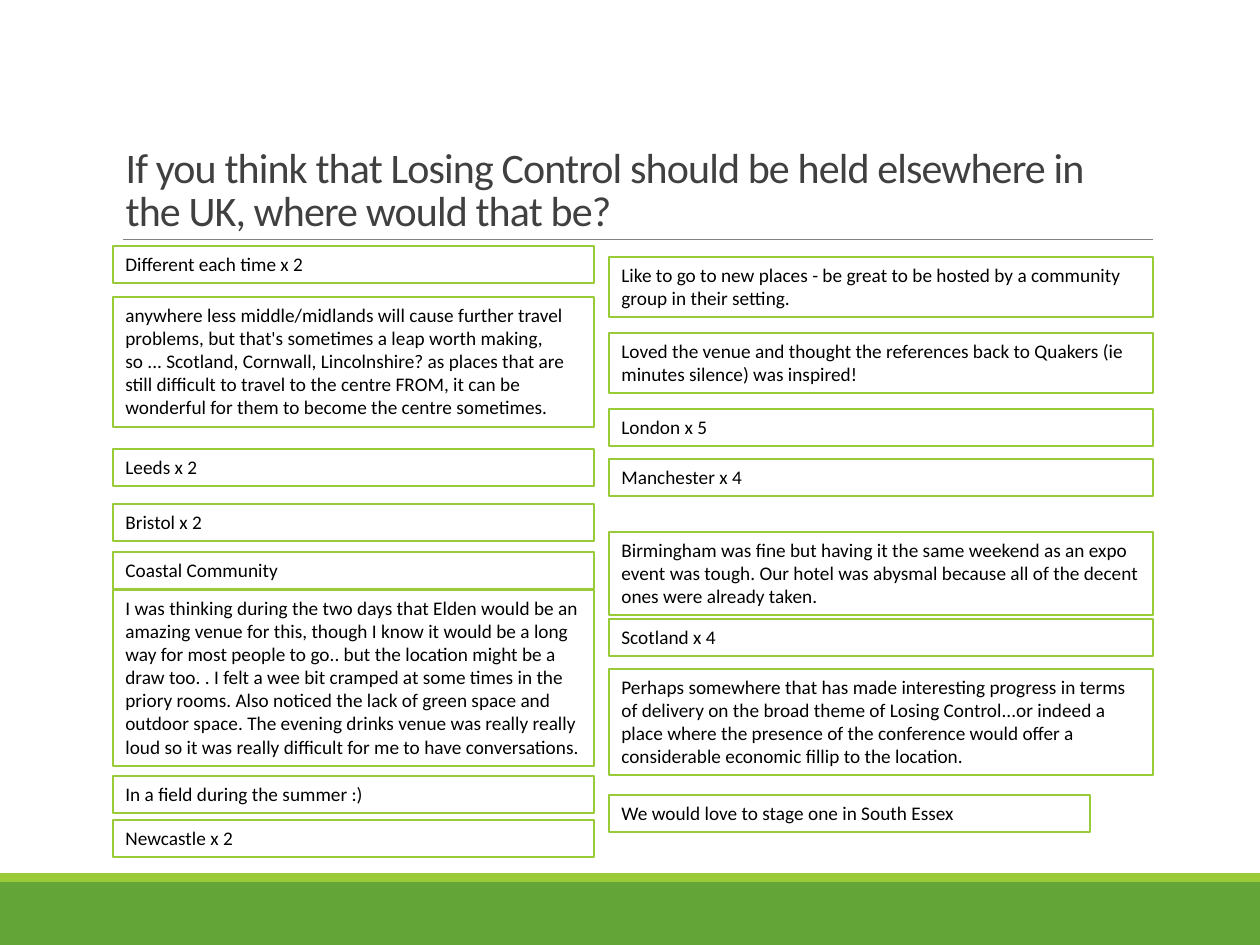
"""Build the slide of answers about where to hold Losing Control."""
from pptx import Presentation
from pptx import util as u
from pptx.dml.color import RGBColor
from pptx.enum import shapes, text
from pptx.oxml.ns import qn
from lxml import etree


def px(n):
    return round(n * 914400 / 126)


def rgb(value):
    return RGBColor.from_string(value)


GREEN, LIME = "63A537", "99CB38"
LEFT, RIGHT = 113, 609
NARROW, WIDE = 481, 544

prs = Presentation()
prs.slide_width, prs.slide_height = px(1260), px(945)
s = prs.slides.add_slide(prs.slide_layouts[5])

for top, height, colour in [(882, 63, GREEN), (873, 9, LIME)]:
    sp = s.shapes.add_shape(shapes.MSO_SHAPE.RECTANGLE, 0, px(top), px(1260), px(height))
    sp.shadow.inherit = False
    sp.fill.solid()
    sp.fill.fore_color.rgb = rgb(colour)
    sp.line.fill.background()

rule = s.shapes.add_connector(shapes.MSO_CONNECTOR.STRAIGHT, px(123), px(239), px(1153), px(239))
rule.line.color.rgb = rgb("808080")
rule.line.width = u.Pt(0.5)
etree.SubElement(rule._element.spPr, qn("a:effectLst"))

title = s.shapes.title
title.left, title.top, title.width, title.height = px(113), px(41), px(1040), px(200)
tf = title.text_frame
tf.word_wrap = True
tf.auto_size = text.MSO_AUTO_SIZE.NONE
tf.vertical_anchor = text.MSO_ANCHOR.BOTTOM
p = tf.paragraphs[0]
p.alignment = text.PP_ALIGN.LEFT
p.line_spacing = 0.85
r = p.add_run()
r.text = "If you think that Losing Control should be held elsewhere in the UK, where would that be?"
r.font.name, r.font.size = "Calibri", u.Pt(24)
r.font.color.rgb = rgb("404040")
r.font._element.set("spc", "-50")

answers = [
    (LEFT, 246, NARROW, 1, "Different each time x 2"),
    (LEFT, 297, NARROW, 5,
     "anywhere less middle/midlands will cause further travel problems, but that's sometimes "
     "a leap worth making, so ... Scotland, Cornwall, Lincolnshire? as places that are still "
     "difficult to travel to the centre FROM, it can be wonderful for them to become the "
     "centre sometimes."),
    (LEFT, 449, NARROW, 1, "Leeds x 2"),
    (LEFT, 504, NARROW, 1, "Bristol x 2"),
    (LEFT, 552, NARROW, 1, "Coastal Community"),
    (LEFT, 590, NARROW, 7,
     "I was thinking during the two days that Elden would be an amazing venue for this, though "
     "I know it would be a long way for most people to go.. but the location might be a draw "
     "too. . I felt a wee bit cramped at some times in the priory rooms. Also noticed the lack "
     "of green space and outdoor space. The evening drinks venue was really really loud so it "
     "was really difficult for me to have conversations."),
    (LEFT, 776, NARROW, 1, "In a field during the summer :)"),
    (LEFT, 820, NARROW, 1, "Newcastle x 2"),
    (RIGHT, 257, WIDE, 2,
     "Like to go to new places - be great to be hosted by a community group in their setting. "),
    (RIGHT, 333, WIDE, 2,
     "Loved the venue and thought the references back to Quakers (ie minutes silence) was "
     "inspired!"),
    (RIGHT, 409, WIDE, 1, "London x 5"),
    (RIGHT, 459, WIDE, 1, "Manchester x 4"),
    (RIGHT, 532, WIDE, 3,
     "Birmingham was fine but having it the same weekend as an expo event was tough. Our hotel "
     "was abysmal because all of the decent ones were already taken."),
    (RIGHT, 619, WIDE, 1, "Scotland x 4"),
    (RIGHT, 669, WIDE, 4,
     "Perhaps somewhere that has made interesting progress in terms of delivery on the broad "
     "theme of Losing Control...or indeed a place where the presence of the conference would "
     "offer a considerable economic fillip to the location."),
    (RIGHT, 795, NARROW, 1, "We would love to stage one in South Essex"),
]

for left, top, width, lines, words in answers:
    height = round(13.3 + 23.3 * lines)
    sp = s.shapes.add_shape(shapes.MSO_SHAPE.RECTANGLE, px(left), px(top), px(width), px(height))
    sp.shadow.inherit = False
    sp.fill.background()
    sp.line.color.rgb = rgb(LIME)
    sp.line.width = u.Pt(0.75)
    tf = sp.text_frame
    tf.word_wrap = True
    tf.auto_size = text.MSO_AUTO_SIZE.SHAPE_TO_FIT_TEXT
    tf.vertical_anchor = text.MSO_ANCHOR.TOP
    p = tf.paragraphs[0]
    p.alignment = text.PP_ALIGN.LEFT
    r = p.add_run()
    r.text = words
    r.font.name, r.font.size = "Calibri", u.Pt(11)
    r.font.color.rgb = rgb("000000")

prs.save("out.pptx")
